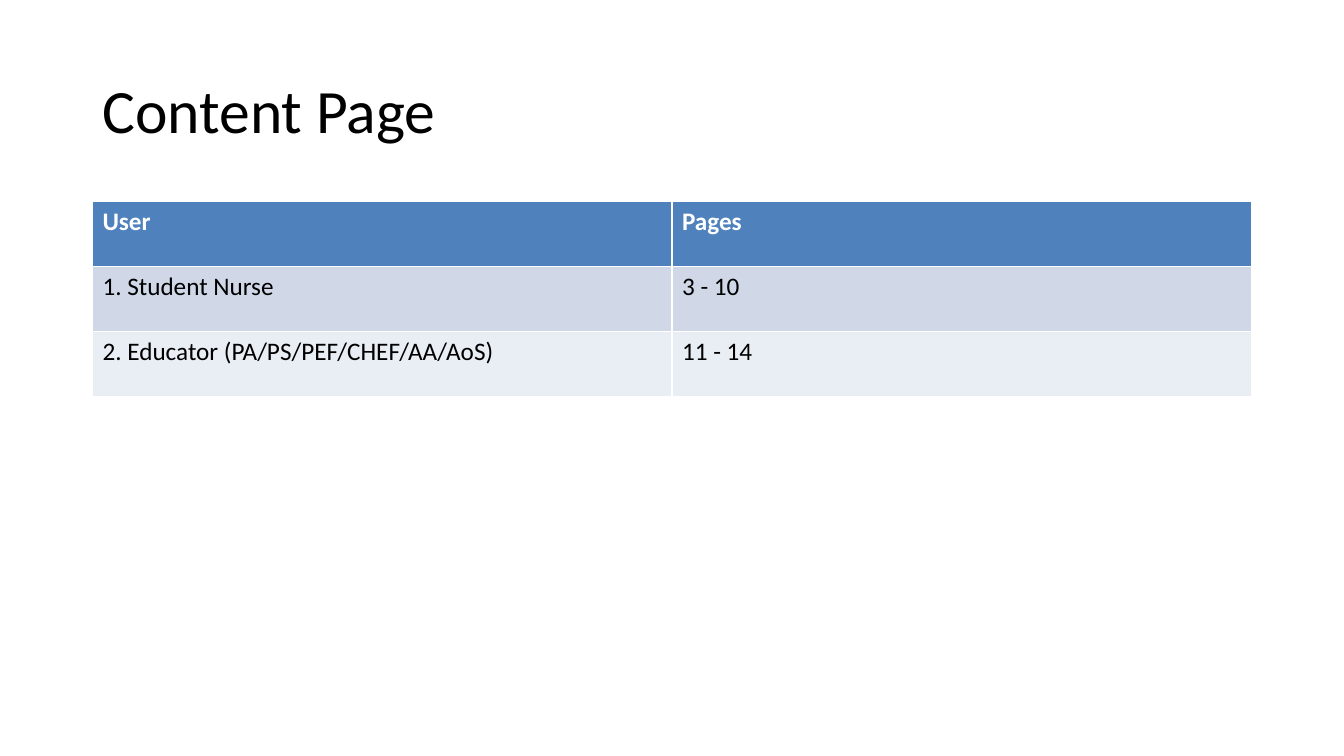
import pptx
import pptx.dml.color
import pptx.enum.text
import pptx.util

Cm = pptx.util.Cm
COLORS = {
    "header": "4F81BD",
    "band_dark": "D0D8E8",
    "band_light": "E9EDF4",
    "text": "000000",
    "header_text": "FFFFFF",
}


class SlideBuilder:
    """Holds the style and the current slide, and adds elements to it."""

    def __init__(self, slide, font="Calibri"):
        self.slide = slide
        self.font = font

    def color(self, name):
        return pptx.dml.color.RGBColor.from_string(COLORS[name])

    def set_text(self, tf, text, size, color, bold=False):
        tf.text = text
        p = tf.paragraphs[0]
        r = p.runs[0]
        r.font.name = self.font
        r.font.size = pptx.util.Pt(size)
        r.font.bold = bold
        r.font.color.rgb = self.color(color)
        return p

    def title(self, text, left, top, width, height):
        sp = self.slide.shapes.add_textbox(Cm(left), Cm(top), Cm(width), Cm(height))
        tf = sp.text_frame
        tf.word_wrap = True
        tf.vertical_anchor = pptx.enum.text.MSO_ANCHOR.MIDDLE
        p = self.set_text(tf, text, 44, "text")
        p.line_spacing = 0.9

    def table(self, rows, left, top, width, row_height):
        table = self.slide.shapes.add_table(
            len(rows), len(rows[0]), Cm(left), Cm(top),
            Cm(width), Cm(row_height * len(rows))).table
        for i, row in enumerate(rows):
            is_header = i == 0
            band = "band_dark" if i % 2 else "band_light"
            for j, text in enumerate(row):
                cell = table.cell(i, j)
                cell.fill.solid()
                cell.fill.fore_color.rgb = self.color("header" if is_header else band)
                self.set_text(cell.text_frame, text, 18,
                              "header_text" if is_header else "text", is_header)


def main():
    prs = pptx.Presentation()
    prs.slide_width = Cm(33.87)
    prs.slide_height = Cm(19.05)
    page = SlideBuilder(prs.slides.add_slide(prs.slide_layouts[6]))
    page.title("Content Page", 2.33, 1.01, 29.21, 3.68)
    page.table([
        ("User", "Pages"),
        ("1. Student Nurse", "3 - 10"),
        ("2. Educator (PA/PS/PEF/CHEF/AA/AoS)", "11 - 14"),
    ], 2.33, 5.08, 29.21, 1.64)
    prs.save("out.pptx")


if __name__ == "__main__":
    main()
